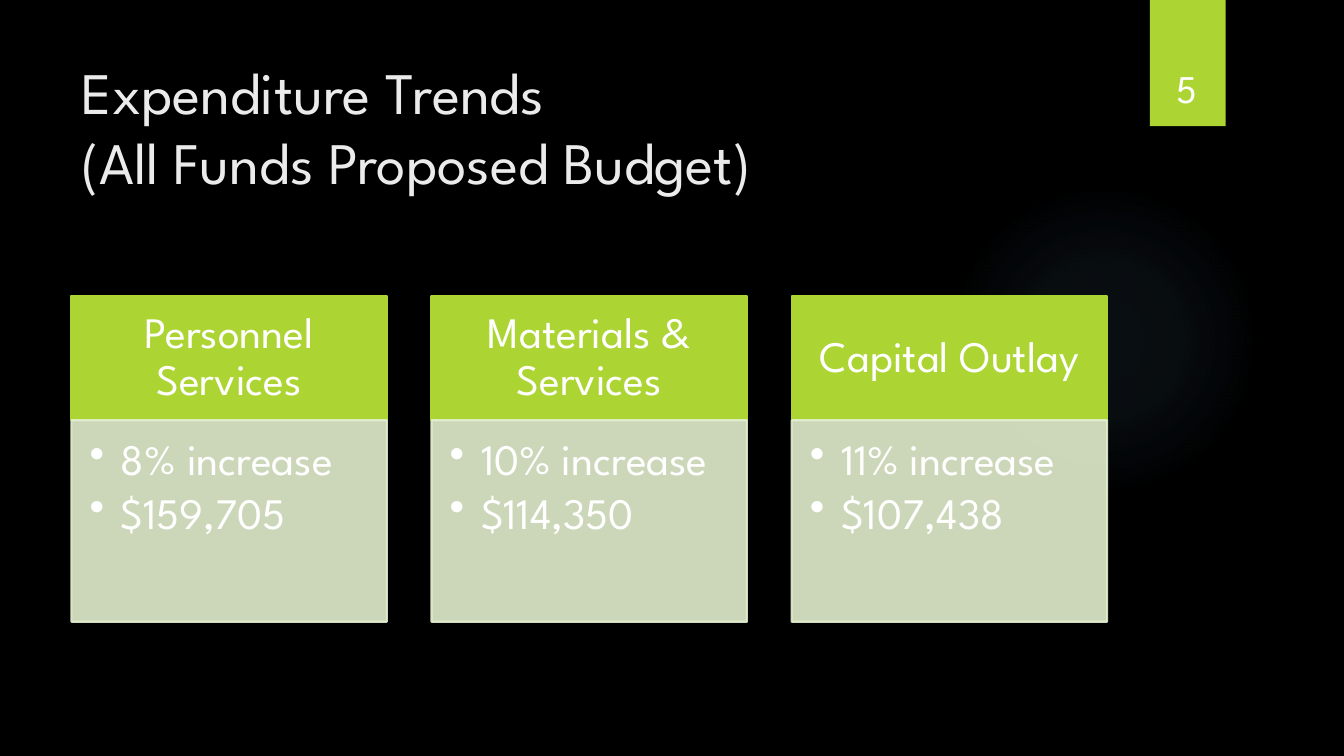
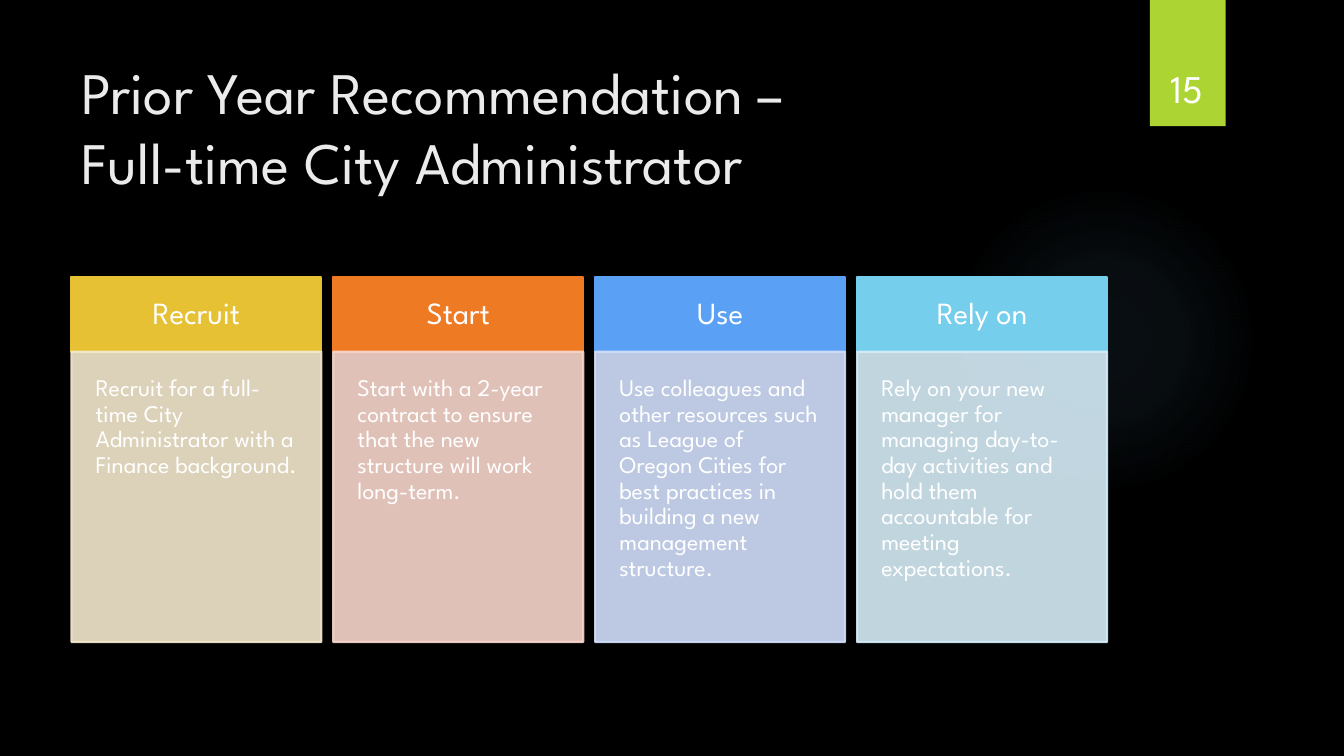
"""Build two budget slides with headed cards on a black background."""
from lxml import etree
from pptx import Presentation
from pptx.dml.color import RGBColor
from pptx.enum.shapes import MSO_SHAPE
from pptx.enum.text import MSO_ANCHOR, PP_ALIGN
from pptx.oxml import parse_xml
from pptx.oxml.ns import nsdecls, qn
from pptx.util import Cm, Pt

RECT, OVAL = MSO_SHAPE.RECTANGLE, MSO_SHAPE.OVAL
LEFT, CENTER = PP_ALIGN.LEFT, PP_ALIGN.CENTER
TOP, MIDDLE, BOTTOM = MSO_ANCHOR.TOP, MSO_ANCHOR.MIDDLE, MSO_ANCHOR.BOTTOM

BLACK = RGBColor(0x00, 0x00, 0x00)
WHITE = RGBColor(0xFF, 0xFF, 0xFF)
TITLE_GREY = RGBColor(0xEB, 0xEB, 0xEB)
GLOW_BLUE = RGBColor(0x7A, 0xC4, 0xF0)
GREEN, PALE_GREEN = RGBColor(0xAC, 0xD4, 0x33), RGBColor(0xE3, 0xEF, 0xCE)
GOLD, PALE_GOLD = RGBColor(0xE6, 0xC1, 0x33), RGBColor(0xF5, 0xE9, 0xCE)
ORANGE, PALE_ORANGE = RGBColor(0xEF, 0x7A, 0x24), RGBColor(0xF9, 0xD7, 0xCD)
BLUE, PALE_BLUE = RGBColor(0x5A, 0xA0, 0xF5), RGBColor(0xD2, 0xDF, 0xFB)
CYAN, PALE_CYAN = RGBColor(0x75, 0xCE, 0xEC), RGBColor(0xD6, 0xED, 0xF8)

FONT = "League Spartan"
CONTENT_LEFT, CONTENT_WIDTH = 1.8, 26.1
GLOW_STOPS = ((0, 7), (36, 6), (69, 0))
DEFAULT_INSETS = (0.25, 0.13, 0.25, 0.13)


def write(frame, text, size, color=WHITE, align=LEFT, anchor=TOP,
          insets=DEFAULT_INSETS, line_spacing=None, after=0, bullet_indent=None):
    frame.word_wrap = True
    frame.vertical_anchor = anchor
    (frame.margin_left, frame.margin_top,
     frame.margin_right, frame.margin_bottom) = map(Cm, insets)
    frame.text = text
    for paragraph in frame.paragraphs:
        paragraph.alignment = align
        paragraph.line_spacing = line_spacing
        paragraph.space_after = Pt(after)
        if bullet_indent:
            properties = paragraph._p.get_or_add_pPr()
            properties.set("marL", str(Cm(bullet_indent)))
            properties.set("indent", str(-Cm(bullet_indent)))
            etree.SubElement(properties, qn("a:buChar"), char="•")
        for run in paragraph.runs:
            run.font.name = FONT
            run.font.size = Pt(size)
            run.font.color.rgb = color


class Deck:
    """Holds the shared style and the slide being built."""

    def __init__(self):
        self.presentation = Presentation()
        self.presentation.slide_width = Cm(33.87)
        self.presentation.slide_height = Cm(19.05)
        background = self.presentation.slide_master.background.fill
        background.solid()
        background.fore_color.rgb = BLACK
        self.slide = None

    def new_slide(self, title, number):
        layout = self.presentation.slide_layouts[6]
        self.slide = self.presentation.slides.add_slide(layout)
        self.glow()
        self.panel(28.98, 0, 1.91, 3.18, GREEN)
        self.label(title, CONTENT_LEFT, 1.27, 26.14, 3.89, size=42, color=TITLE_GREY)
        self.label(str(number), 28.75, 0.81, 2.34, 2.13, size=28,
                   align=CENTER, anchor=BOTTOM)

    def label(self, text, left, top, width, height, **style):
        box = self.slide.shapes.add_textbox(Cm(left), Cm(top), Cm(width), Cm(height))
        write(box.text_frame, text, **style)

    def panel(self, left, top, width, height, color, kind=RECT, outlined=False,
              opacity=100):
        shape = self.slide.shapes.add_shape(
            kind, Cm(left), Cm(top), Cm(width), Cm(height))
        shape.shadow.inherit = False
        shape.fill.solid()
        shape.fill.fore_color.rgb = color
        if outlined:
            shape.line.color.rgb = color
            shape.line.width = Pt(1.5)
        else:
            shape.line.fill.background()
        if opacity < 100:
            for tint in shape._element.spPr.iter(qn("a:srgbClr")):
                etree.SubElement(tint, qn("a:alpha"), val=str(opacity * 1000))
        return shape

    def glow(self):
        halo = self.panel(23.9, 4.65, 7.82, 7.82, GLOW_BLUE, kind=OVAL)
        stops = "".join(
            f'<a:gs pos="{position * 1000}"><a:srgbClr val="{GLOW_BLUE}">'
            f'<a:alpha val="{opacity * 1000}"/></a:srgbClr></a:gs>'
            for position, opacity in GLOW_STOPS)
        gradient = parse_xml(
            f'<a:gradFill {nsdecls("a")}><a:gsLst>{stops}</a:gsLst>'
            '<a:path path="circle"><a:fillToRect l="50000" t="50000" '
            'r="50000" b="50000"/></a:path></a:gradFill>')
        properties = halo._element.spPr
        properties.replace(properties.find(qn("a:solidFill")), gradient)

    def cards(self, cards, top, width, head_height, body_height, head_style, body_style):
        pitch = (CONTENT_WIDTH - width) / (len(cards) - 1)
        for index, (heading, body, color, pale) in enumerate(cards):
            left = CONTENT_LEFT + index * pitch
            head_panel = self.panel(left, top, width, head_height, color, outlined=True)
            write(head_panel.text_frame, heading, align=CENTER, anchor=MIDDLE,
                  line_spacing=0.9, **head_style)
            body_panel = self.panel(left, top + head_height, width, body_height, pale,
                                    outlined=True, opacity=90)
            write(body_panel.text_frame, body, line_spacing=0.9, **body_style)


def main():
    deck = Deck()

    deck.new_slide("Expenditure Trends\v(All Funds Proposed Budget)", 5)
    trends = [
        ("Personnel Services", "8% increase\n$159,705", GREEN, PALE_GREEN),
        ("Materials & Services", "10% increase\n$114,350", GREEN, PALE_GREEN),
        ("Capital Outlay", "11% increase\n$107,438", GREEN, PALE_GREEN),
    ]
    deck.cards(trends, top=7.47, width=7.95, head_height=3.12, body_height=5.08,
               head_style={"size": 31, "insets": (0.61, 0.36, 0.61, 0.36)},
               body_style={"size": 31, "insets": (0.46, 0.46, 0.61, 0.69),
                           "after": 4.5, "bullet_indent": 0.79})

    deck.new_slide("Prior Year Recommendation –\vFull-time City Administrator", 15)
    steps = [
        ("Recruit", "Recruit for a full-time City Administrator with a Finance "
         "background.", GOLD, PALE_GOLD),
        ("Start", "Start with a 2-year contract to ensure that the new structure "
         "will work long-term.", ORANGE, PALE_ORANGE),
        ("Use", "Use colleagues and other resources such as League of Oregon Cities "
         "for best practices in building a new management structure.",
         BLUE, PALE_BLUE),
        ("Rely on", "Rely on your new manager for managing day-to-day activities and "
         "hold them accountable for meeting expectations.", CYAN, PALE_CYAN),
    ]
    deck.cards(steps, top=6.98, width=6.3, head_height=1.88, body_height=7.32,
               head_style={"size": 22, "insets": (0.51,) * 4},
               body_style={"size": 17, "insets": (0.61,) * 4})

    deck.presentation.save("out.pptx")


if __name__ == "__main__":
    main()
